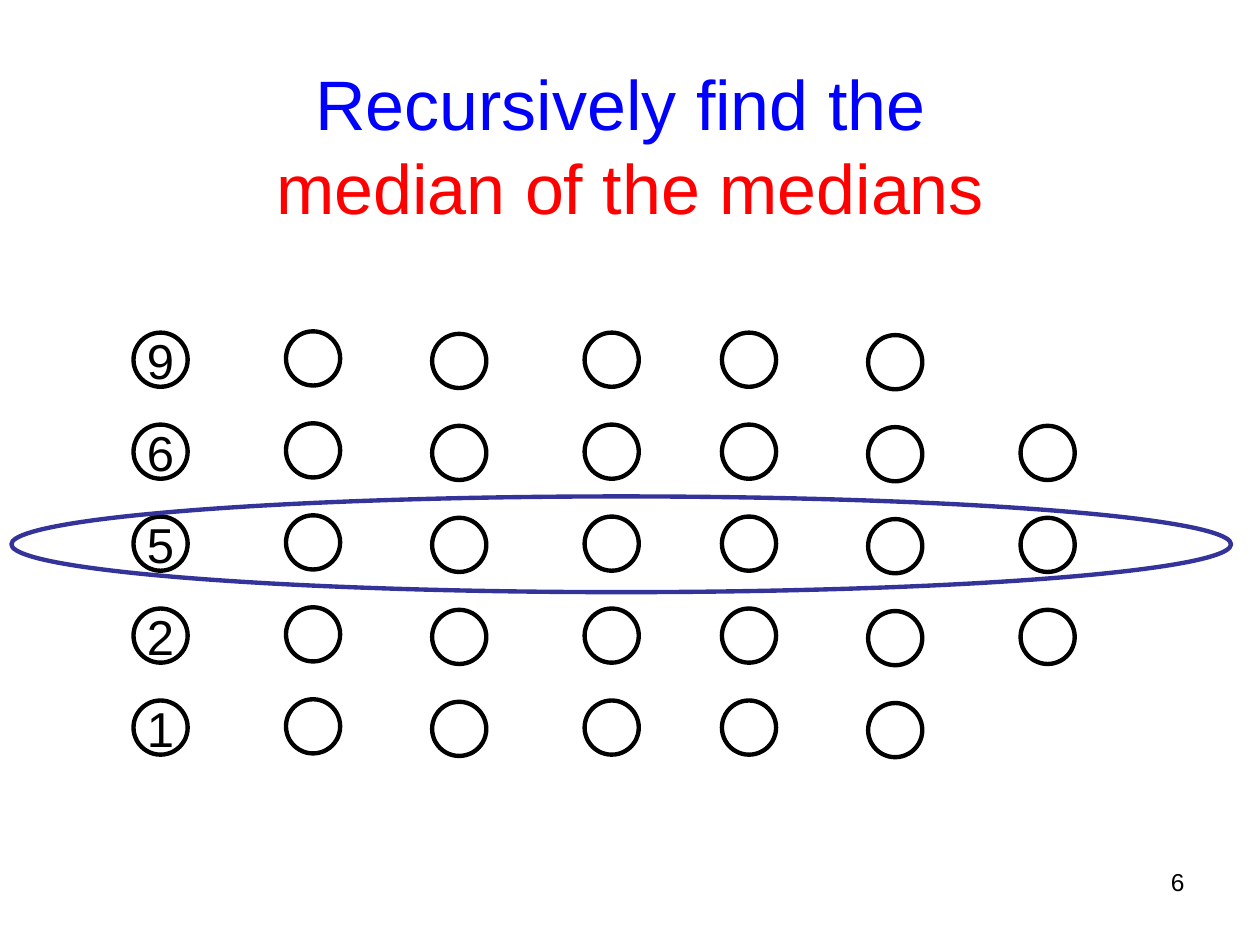
from pptx import Presentation
from pptx.dml.color import RGBColor
from pptx.enum import shapes, text
from pptx.util import Inches, Pt


def ink(code):
    """Turn a hex string into a colour."""
    return RGBColor.from_string(code)


def add_run(par, words, size, code="000000"):
    """Add one run of Arial to a paragraph."""
    run = par.add_run()
    run.text = words
    run.font.name = "Arial"
    run.font.size = Pt(size)
    run.font.color.rgb = ink(code)


def add_box(slide, left, top, width, height, align):
    """Add a text box and return its frame and first paragraph."""
    box = slide.shapes.add_textbox(Inches(left), Inches(top), Inches(width), Inches(height))
    frame = box.text_frame
    frame.word_wrap = True
    par = frame.paragraphs[0]
    par.alignment = align
    return frame, par


def add_ring(slide, left, top, width, height, code="000000"):
    """Add an unfilled ellipse."""
    ring = slide.shapes.add_shape(
        shapes.MSO_SHAPE.OVAL, Inches(left), Inches(top), Inches(width), Inches(height))
    ring.shadow.inherit = False
    ring.fill.background()
    ring.line.color.rgb = ink(code)
    ring.line.width = Pt(2.5)
    return ring


def add_title(slide, left, top, width, height):
    """Write the two-colour title."""
    frame, par = add_box(slide, left, top, width, height, text.PP_ALIGN.CENTER)
    frame.vertical_anchor = text.MSO_ANCHOR.MIDDLE
    add_run(par, "Recursively find the ", 40, "0000FF")
    par.add_line_break()
    add_run(par, "median of the medians", 40, "FF0000")


def add_group(slide, left, top, rows, labels=""):
    """Draw one column of rings on the given rows, with labels if any."""
    size, step = 0.43, 0.73
    for row in rows:
        ring = add_ring(slide, left, top + row * step, size, size)
        if labels:
            frame = ring.text_frame
            frame.word_wrap = False
            frame.vertical_anchor = text.MSO_ANCHOR.MIDDLE
            par = frame.paragraphs[0]
            par.alignment = text.PP_ALIGN.CENTER
            add_run(par, labels[row], 28)


def add_grid(slide, left, top):
    """Draw all groups of five and ring the row of medians."""
    full = range(5)
    add_group(slide, left, top, full, "96521")
    cols = [(1.21, -0.01), (2.37, 0.01), (3.58, 0), (4.67, 0), (5.83, 0.02)]
    for shift, drop in cols:
        add_group(slide, left + shift, top + drop, full)
    add_group(slide, left + 7.04, top + 0.01, range(1, 4))
    add_ring(slide, left - 0.97, top + 1.3, 9.68, 0.76, "333399")


def add_page(slide, left, top, width, height):
    """Write the page number."""
    _, par = add_box(slide, left, top, width, height, text.PP_ALIGN.RIGHT)
    add_run(par, "6", 14)


def main():
    """Build and save the slide."""
    deck = Presentation()
    deck.slide_width, deck.slide_height = Inches(10), Inches(7.5)
    slide = deck.slides.add_slide(deck.slide_layouts[6])
    add_page(slide, 7.17, 6.83, 2.33, 0.52)
    add_title(slide, 0, 0.52, 10, 1.25)
    add_grid(slide, 1.06, 2.64)
    deck.save("out.pptx")


if __name__ == "__main__":
    main()
